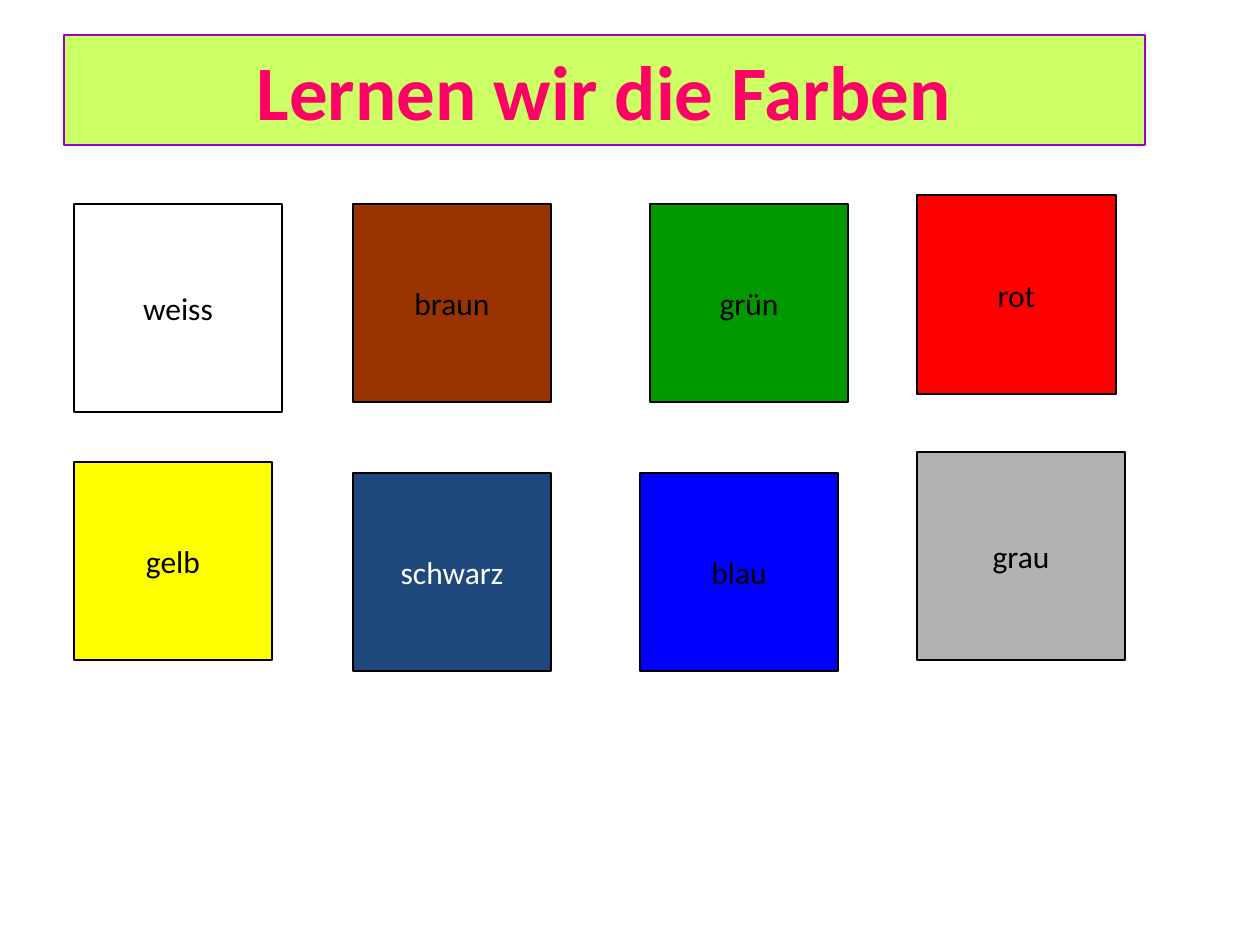
from pptx import Presentation
from pptx import util as u
from pptx.dml.color import RGBColor
from pptx.enum import shapes, text

PX = u.Inches(1) / 126
COLORS = {
    "title": "FF0066", "banner": "CCFF66", "border": "9900CC",
    "black": "000000", "white": "FFFFFF",
    "weiss": "FFFFFF", "braun": "993300", "grün": "009900", "rot": "FF0000",
    "gelb": "FFFF00", "schwarz": "1F497D", "blau": "0000FF", "grau": "B2B2B2",
}


def px(n):
    return u.Emu(round(n * PX))


def add_box(slide, words, *, left, top, width, height, fill,
            line="black", color="black", size=18, bold=False, wrap=False):
    box = slide.shapes.add_shape(shapes.MSO_SHAPE.RECTANGLE,
                                 px(left), px(top), px(width), px(height))
    box.shadow.inherit = False
    box.fill.solid()
    box.fill.fore_color.rgb = RGBColor.from_string(COLORS[fill])
    box.line.color.rgb = RGBColor.from_string(COLORS[line])
    box.line.width = u.Pt(0.75)
    frame = box.text_frame
    frame.word_wrap = wrap
    frame.vertical_anchor = text.MSO_ANCHOR.MIDDLE
    paragraph = frame.paragraphs[0]
    paragraph.alignment = text.PP_ALIGN.CENTER
    run = paragraph.add_run()
    run.text = words
    run.font.name = "Calibri"
    run.font.size = u.Pt(size)
    run.font.bold = bold
    run.font.color.rgb = RGBColor.from_string(COLORS[color])


prs = Presentation()
prs.slide_width, prs.slide_height = px(1260), px(945)
slide = prs.slides.add_slide(prs.slide_layouts[6])

# Title banner
add_box(slide, "Lernen wir die Farben", left=64, top=35, width=1081, height=110,
        fill="banner", line="border", color="title", size=44, bold=True, wrap=True)

# Colour squares: name, left, top, side
swatches = [
    ("weiss", 74, 204, 208),
    ("braun", 353, 204, 198),
    ("grün", 650, 204, 198),
    ("rot", 917, 195, 199),
    ("gelb", 74, 462, 198),
    ("schwarz", 353, 473, 198),
    ("blau", 640, 473, 198),
    ("grau", 917, 452, 208),
]
for name, left, top, side in swatches:
    add_box(slide, name, left=left, top=top, width=side, height=side, fill=name,
            color="white" if name == "schwarz" else "black")

prs.save("out.pptx")
